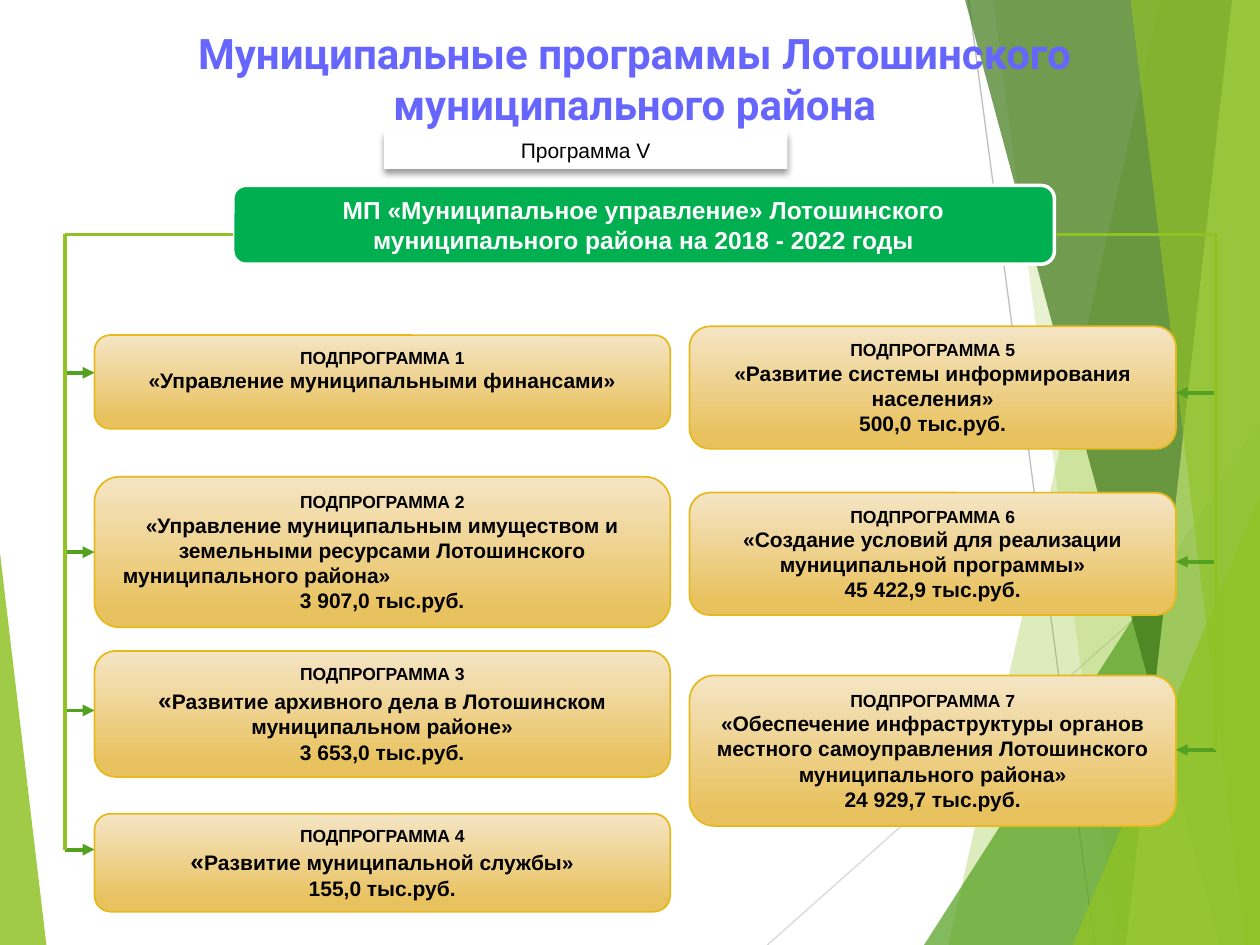
from lxml.etree import SubElement as Sub
from pptx import Presentation
from pptx.dml.color import RGBColor
from pptx.enum.shapes import MSO_CONNECTOR as Conn, MSO_SHAPE as Kind
from pptx.enum.text import MSO_ANCHOR as Anchor, PP_ALIGN as Align
from pptx.oxml.ns import qn
from pptx.util import Pt

WIDE, HIGH = 720, 540
LIME, GREEN = "90C226", "54A021"


def hue(code):
    return RGBColor.from_string(code)


class Deck:
    font = "Arial"
    ink = "000000"

    def __init__(self):
        self.prs = Presentation()
        self.prs.slide_width, self.prs.slide_height = Pt(WIDE), Pt(HIGH)
        self.slide = self.prs.slides.add_slide(self.prs.slide_layouts[6])
        self.shapes = self.slide.shapes

    def tint(self, shape, color, alpha):
        """Fill with a see-through colour; alpha is the percent of opacity."""
        shape.shadow.inherit = False
        shape.line.fill.background()
        shape.fill.solid()
        shape.fill.fore_color.rgb = hue(color)
        node = shape._element.spPr.find(qn("a:solidFill"))[0]
        Sub(node, qn("a:alpha"), val=str(alpha * 1000))

    def band(self, top, foot, color, alpha):
        """Draw a slanted band from its left edge to the slide's right edge."""
        form = self.shapes.build_freeform(Pt(top), 0, scale=1.0)
        rest = [(WIDE, 0), (WIDE, HIGH), (foot, HIGH)]
        form.add_line_segments([(Pt(x), Pt(y)) for x, y in rest], close=True)
        self.tint(form.convert_to_shape(), color, alpha)

    def wedge(self, x, y, w, tip, color, alpha):
        """Draw a right triangle that stands on the slide's foot."""
        shape = self.shapes.add_shape(
            Kind.ISOSCELES_TRIANGLE, Pt(x), Pt(y), Pt(w), Pt(HIGH - y))
        shape.adjustments[0] = tip
        self.tint(shape, color, alpha)

    def line(self, x1, y1, x2, y2, color, width=2.25, arrow=False):
        """Draw a line; an arrow points at its first end."""
        line = self.shapes.add_connector(
            Conn.STRAIGHT, Pt(x1), Pt(y1), Pt(x2), Pt(y2))
        line.line.color.rgb = hue(color)
        line.line.width = Pt(width)
        if arrow:
            Sub(line.line._get_or_add_ln(), qn("a:headEnd"), type="triangle")
        Sub(line._element.spPr, qn("a:effectLst"))

    def box(self, kind, x, y, w, h):
        shape = self.shapes.add_shape(kind, Pt(x), Pt(y), Pt(w), Pt(h))
        shape.shadow.inherit = False
        shape.line.fill.background()
        shape.fill.solid()
        shape.text_frame.vertical_anchor = Anchor.MIDDLE
        return shape

    def text(self, frame, rows, font=None, color=None, bold=True):
        """Write (text, size) rows as centred paragraphs."""
        frame.word_wrap = True
        for i, (text, size) in enumerate(rows):
            para = frame.add_paragraph() if i else frame.paragraphs[0]
            para.alignment = Align.CENTER
            face = para.font
            face.name, face.size, face.bold = font or self.font, Pt(size), bold
            face.color.rgb = hue(color or self.ink)
            para.add_run().text = text

    def title(self, x, y, w, h, text):
        frame = self.shapes.add_textbox(Pt(x), Pt(y), Pt(w), Pt(h)).text_frame
        frame.vertical_anchor = Anchor.BOTTOM
        frame.margin_bottom = 0
        self.text(frame, [(text, 24)], font="Roboto", color="6666FF")

    def label(self, x, y, w, h, text):
        """Draw a white plate with a soft shadow below."""
        shape = self.box(Kind.RECTANGLE, x, y, w, h)
        shape.fill.fore_color.rgb = hue("FFFFFF")
        self.text(shape.text_frame, [(text, 12)], bold=False)
        shade = Sub(shape._element.spPr.find(qn("a:effectLst")),
                    qn("a:outerShdw"), blurRad=str(Pt(4)), dist=str(Pt(3)),
                    dir="5400000", rotWithShape="0")
        dark = Sub(shade, qn("a:srgbClr"), val="000000")
        Sub(dark, qn("a:alpha"), val="40000")

    def header(self, x, y, w, h, text):
        shape = self.box(Kind.ROUNDED_RECTANGLE, x, y, w, h)
        shape.fill.fore_color.rgb = hue("00B050")
        shape.line.color.rgb = hue("FFFFFF")
        shape.line.width = Pt(2)
        self.text(shape.text_frame, [(text, 14)], color="FFFFFF")

    def card(self, x, y, w, h, num, *rows):
        shape = self.box(Kind.ROUNDED_RECTANGLE, x, y, w, h)
        shape.fill.gradient()
        shape.fill.gradient_angle = 270
        stops = zip(shape.fill.gradient_stops, (0, 0.88), ("F5E5C5", "E9C260"))
        for stop, place, color in stops:
            stop.position = place
            stop.color.rgb = hue(color)
        shape.line.color.rgb = hue("E6B91E")
        shape.line.width = Pt(1)
        frame = shape.text_frame
        self.text(frame, [(f"ПОДПРОГРАММА {num}", 10)] + [(r, 12) for r in rows])
        return frame

    def quote(self, frame):
        """Enlarge the opening quote mark of the second paragraph."""
        para = frame.paragraphs[1]
        run = para.runs[0]
        rest = run.text[1:]
        run.text, run.font.size = run.text[0], Pt(14)
        para.add_run().text = rest


def scene(deck):
    deck.line(553.5, 0, 625.5, HIGH, "BFBFBF", 0.75)
    deck.line(WIDE, 290, 438.5, HIGH, "D9D9D9", 0.75)
    deck.band(663, 542, LIME, 30)
    deck.band(567.5, 638.5, LIME, 20)
    deck.wedge(528, 240, 192, 1, GREEN, 72)
    deck.band(551.5, 697, "3F7819", 70)
    deck.band(704, 643.5, "C0E474", 70)
    deck.band(646, 711.5, LIME, 65)
    deck.wedge(613, 283, 107, 1, LIME, 80)
    deck.wedge(0, 316, 26.5, 0, LIME, 85)


def cards(deck):
    left, right = (54, 329), (394, 278)

    def put(col, y, h, *rows):
        return deck.card(col[0], y, col[1], h, *rows)

    first = put(left, 191.5, 53.5, 1, "«Управление муниципальными финансами»")
    first.margin_bottom = Pt(17.5)
    estate = put(left, 272.5, 86, 2,
                 "«Управление муниципальным имуществом и земельными "
                 "ресурсами Лотошинского",
                 "муниципального района»", "3 907,0 тыс.руб.")
    tail = estate.paragraphs[2]
    tail.alignment = Align.LEFT
    tail._p.get_or_add_pPr().set("marL", str(Pt(5)))
    deck.quote(put(left, 372, 72, 3,
                   "«Развитие архивного дела в Лотошинском муниципальном районе»",
                   "3 653,0 тыс.руб."))
    deck.quote(put(left, 465, 56, 4, "«Развитие муниципальной службы»",
                   "155,0 тыс.руб."))
    put(right, 186.5, 70, 5, "«Развитие системы информирования населения»",
        "500,0 тыс.руб.")
    put(right, 281.5, 70, 6,
        "«Создание условий для реализации муниципальной программы»",
        "45 422,9 тыс.руб.")
    put(right, 386, 86, 7,
        "«Обеспечение инфраструктуры органов местного самоуправления "
        "Лотошинского муниципального района»", "24 929,7 тыс.руб.")


def links(deck):
    """Join the header to the cards: head edge, trunk, card edge, arrow heights."""
    top = 134
    sides = [(133, 37, 54, (213, 315.5, 406, 485.5)),
             (604, 695, 672, (224.5, 321, 428.5))]
    for head, trunk, edge, rows in sides:
        for y in rows:
            deck.line(edge, y, trunk, y, GREEN, arrow=True)
        deck.line(trunk, top, trunk, rows[-1], LIME)
        deck.line(head, top, trunk, top, LIME)


def main():
    deck = Deck()
    scene(deck)
    deck.title(39.5, 11.5, 646.5, 62,
               "Муниципальные программы Лотошинского муниципального района")
    deck.header(133, 106, 469.5, 45,
                "МП «Муниципальное управление» Лотошинского "
                "муниципального района на 2018 - 2022 годы")
    cards(deck)
    deck.label(219.5, 75, 230.5, 21.5, "Программа V")
    links(deck)
    deck.prs.save("out.pptx")


if __name__ == "__main__":
    main()
